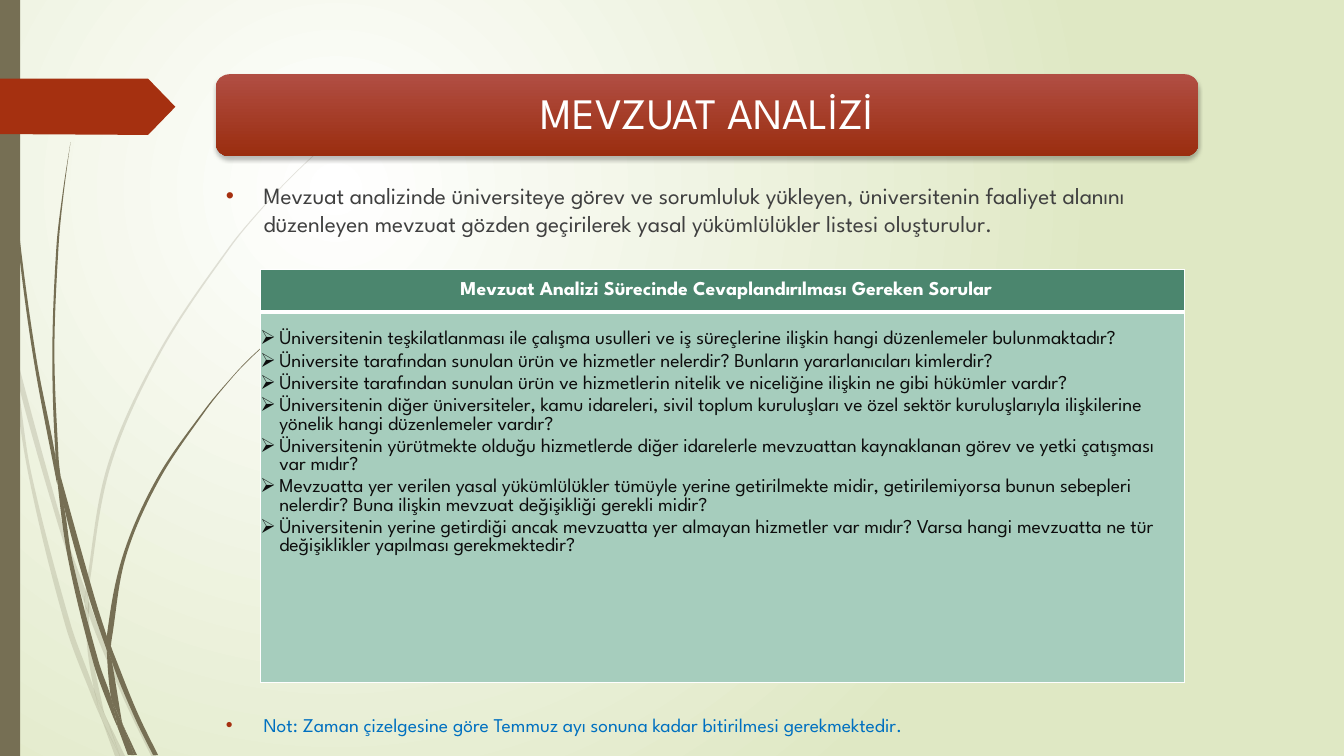
from typing import NamedTuple

from lxml.etree import SubElement
from pptx import Presentation
from pptx.dml.color import RGBColor
from pptx.enum.shapes import MSO_SHAPE as Preset
from pptx.enum.text import MSO_ANCHOR as Anchor, MSO_AUTO_SIZE as AutoSize, PP_ALIGN as Align
from pptx.oxml.ns import qn
from pptx.util import Pt

FONT = "League Spartan"
COLOURS = {"white": "FFFFFF", "mist": "DFE8C4", "olive": "766F54", "rust": "A53010", "black": "000000",
           "banner_top": "B14E43", "banner_bottom": "9A2D0F", "body": "404040", "note": "0070C0",
           "header": "4B866E", "cell": "A6CDBD", "question": "0D0D0D"}
INTRO = ("Mevzuat analizinde üniversiteye görev ve sorumluluk yükleyen, üniversitenin faaliyet alanını "
         "düzenleyen mevzuat gözden geçirilerek yasal yükümlülükler listesi oluşturulur.")
NOTE = "Not: Zaman çizelgesine göre Temmuz ayı sonuna kadar bitirilmesi gerekmektedir."
HEADING = "Mevzuat Analizi Sürecinde Cevaplandırılması Gereken Sorular"
QUESTIONS = [
    "Üniversitenin teşkilatlanması ile çalışma usulleri ve iş süreçlerine ilişkin hangi düzenlemeler bulunmaktadır?",
    "Üniversite tarafından sunulan ürün ve hizmetler nelerdir? Bunların yararlanıcıları kimlerdir?",
    "Üniversite tarafından sunulan ürün ve hizmetlerin nitelik ve niceliğine ilişkin ne gibi hükümler vardır?",
    "Üniversitenin diğer üniversiteler, kamu idareleri, sivil toplum kuruluşları ve özel sektör "
    "kuruluşlarıyla ilişkilerine yönelik hangi düzenlemeler vardır?",
    "Üniversitenin yürütmekte olduğu hizmetlerde diğer idarelerle mevzuattan kaynaklanan görev ve yetki "
    "çatışması var mıdır?",
    "Mevzuatta yer verilen yasal yükümlülükler tümüyle yerine getirilmekte midir, getirilemiyorsa bunun "
    "sebepleri nelerdir? Buna ilişkin mevzuat değişikliği gerekli midir?",
    "Üniversitenin yerine getirdiği ancak mevzuatta yer almayan hizmetler var mıdır? Varsa hangi "
    "mevzuatta ne tür değişiklikler yapılması gerekmektedir?",
]
Points = list[tuple[float, float]]


class Blade(NamedTuple):
    """One piece of grass: its two edges, each from top to bottom."""
    left: Points
    right: Points


PALE_GRASS = [
    Blade([(0, 215.3), (7.2, 247.7), (7.9, 252)], [(0, 203), (6.5, 231.8), (7.9, 252)]),
    Blade([(10.1, 248.4), (12.2, 270.7), (41.8, 375.8), (60.5, 431.3)],
          [(10.1, 248.4), (44.6, 374.4), (61.2, 421.9)]),
    Blade([(63.4, 429.1), (63.4, 439.2), (88.6, 499.7), (108, 540)],
          [(63.4, 429.1), (66.2, 437), (91.4, 498.2), (111.6, 540)]),
    Blade([(75.6, 511.9), (85.7, 540)], [(75.6, 511.9), (89.3, 540)]),
    Blade([(7.9, 252), (20.2, 338.4), (46.8, 447.1), (66.2, 499), (72.7, 514.1)],
          [(7.9, 252), (12.2, 270.7), (22.3, 337.7), (50.4, 445.7), (67, 491.8), (71.3, 509), (72.7, 514.1)]),
    Blade([(60.5, 431.3), (62.6, 465.1), (67, 491.8), (69.1, 498.2), (75.6, 511.9)],
          [(60.5, 431.3), (63.4, 437.8), (63.4, 439.2), (65.5, 465.1), (74.2, 508.3), (75.6, 511.9)]),
    Blade([(224.6, 110.2), (208.1, 126), (193, 141.8), (164.2, 175.7), (113.8, 250.6), (77, 331.9),
           (61.2, 420.5), (61.2, 421.9), (63.4, 429.1)],
          [(224.6, 110.9), (208.8, 126), (193, 142.6), (164.9, 176.4), (115.2, 251.3), (79.2, 332.6),
           (63.4, 420.5), (63.4, 429.1)]),
    Blade([(72.7, 514.1), (82.1, 540)], [(72.7, 514.1), (85.7, 540)]),
    Blade([(61.2, 421.9), (60.5, 431.3), (63.4, 437.8)], [(61.2, 421.9), (63.4, 429.1), (63.4, 439.2)]),
    Blade([(67, 491.8), (71.3, 509), (72.7, 514.1), (85.7, 540)],
          [(67, 491.8), (69.1, 498.2), (75.6, 511.9), (85.7, 540)]),
]
DARK_GRASS = [
    Blade([(2.2, 0), (2.9, 34.6), (5, 79.2), (12.2, 167.8), (23.8, 255.6), (40.3, 343.4), (41, 346.3)],
          [(2.9, 0), (3.6, 34.6), (5.8, 78.5), (13.7, 167), (25.9, 255.6), (39.6, 326.2), (41, 346.3)]),
    Blade([(43.2, 339.8), (46.1, 363.6), (63.4, 426.2), (76.3, 464.4)],
          [(43.2, 339.8), (67, 424.8), (76.3, 454.3)]),
    Blade([(79.2, 461.5), (79.9, 472.3), (95, 509.8), (109.4, 539.3)],
          [(79.2, 461.5), (81.4, 467.3), (97.9, 508.3), (113, 539.3)]),
    Blade([(41, 343.4), (49, 401), (67, 474.5), (79.9, 509.8), (84.2, 519.8)],
          [(41, 343.4), (46.1, 363.6), (51.8, 400.3), (70.6, 473), (79.2, 497.5), (83.5, 516.2), (84.2, 519.8)]),
    Blade([(50.4, 101.5), (44.6, 139), (40.3, 176.4), (37.4, 251.3), (39.6, 323.3), (43.2, 339.8)],
          [(50.4, 101.5), (45.4, 139), (41.8, 176.4), (38.9, 251.3), (41.8, 326.2), (43.2, 339.8)]),
    Blade([(87.8, 517.7), (95.8, 539.3)], [(87.8, 517.7), (97.9, 539.3)]),
    Blade([(39.6, 323.3), (39.6, 326.2), (41, 343.4), (46.1, 363.6)],
          [(39.6, 323.3), (43.2, 339.8), (46.1, 363.6)]),
    Blade([(187.2, 247.7), (176.4, 257.8), (166.3, 268.6), (146.9, 291.6), (112.3, 341.3), (87.8, 396.7),
           (76.3, 454.3), (79.2, 461.5)],
          [(187.9, 247.7), (176.4, 258.5), (166.3, 269.3), (147.6, 292.3), (113.8, 342.7), (90, 397.4),
           (79.9, 455.8), (79.2, 461.5)]),
    Blade([(84.2, 519.8), (91.4, 539.3)], [(84.2, 519.8), (94.3, 539.3)]),
    Blade([(76.3, 464.4), (79.2, 497.5), (83.5, 508.3), (87.8, 517.7)],
          [(76.3, 464.4), (78.5, 468.7), (79.9, 472.3), (87.1, 515.5), (87.8, 517.7)]),
    Blade([(76.3, 454.3), (76.3, 464.4), (78.5, 468.7), (79.9, 472.3)],
          [(76.3, 454.3), (79.2, 461.5), (79.9, 472.3)]),
    Blade([(79.2, 497.5), (83.5, 516.2), (84.2, 519.8), (93.6, 539.3)],
          [(79.2, 497.5), (83.5, 508.3), (87.8, 517.7), (95.8, 539.3)]),
]
RIBBON = [(0, 56.2), (105.8, 56.2), (125.3, 76.3), (105.8, 96.4), (0, 95.8)]


def rgb(name: str) -> RGBColor:
    return RGBColor.from_string(COLOURS[name])


def paint(shape, colour: str, opacity: int = 100) -> None:
    shape.shadow.inherit = False
    shape.fill.solid()
    shape.fill.fore_color.rgb = rgb(colour)
    shape.line.fill.background()
    if opacity < 100:
        SubElement(shape.fill._xPr.find(".//" + qn("a:srgbClr")), qn("a:alpha"), val=str(opacity * 1000))


def set_stops(fill, first: str, last: str) -> None:
    fill.gradient()
    for stop, colour, position in zip(fill.gradient_stops, (first, last), (0, 1)):
        stop.color.rgb, stop.position = rgb(colour), position


def add_outline(shapes, points: Points, colour: str, opacity: int = 100):
    start, *rest = [(Pt(x), Pt(y)) for x, y in points]
    builder = shapes.build_freeform(*start, scale=1.0)
    builder.add_line_segments(rest, close=True)
    outline = builder.convert_to_shape()
    paint(outline, colour, opacity)
    return outline


def edge_controls(edge: Points) -> list[Points]:
    """Return the two Bézier handles of each span, with x taken as a smooth function of y."""
    chords = [(b[0] - a[0]) / (b[1] - a[1]) for a, b in zip(edge, edge[1:])]
    inner = [(b[0] - a[0]) / (b[1] - a[1]) for a, b in zip(edge, edge[2:])] or chords
    slopes = [1.5 * chords[0] - inner[0] / 2, *inner, 1.5 * chords[-1] - inner[-1] / 2]
    if len(edge) == 2:
        slopes = chords * 2
    return [[(a[0] + s * (b[1] - a[1]) / 3, a[1] + (b[1] - a[1]) / 3),
             (b[0] - t * (b[1] - a[1]) / 3, b[1] - (b[1] - a[1]) / 3)]
            for a, b, s, t in zip(edge, edge[1:], slopes, slopes[1:])]


def add_blade(shapes, blade: Blade, opacity: int) -> None:
    outline = add_outline(shapes, blade.left + blade.right[::-1], "olive", opacity)
    rising = [handles[::-1] for handles in reversed(edge_controls(blade.right))]
    spans = [*edge_controls(blade.left), [], *rising]
    for line, handles in zip(list(outline._element.iter(qn("a:lnTo"))), spans):
        if handles:
            line.tag = qn("a:cubicBezTo")
            for i, (x, y) in enumerate(handles):
                handle = SubElement(line, qn("a:pt"), x=str(Pt(x) - outline.left), y=str(Pt(y) - outline.top))
                line.insert(i, handle)


def write(paragraph, text: str, *, size: float, colour: str, bold: bool = False, align: Align = Align.LEFT,
          before: float = 0, spacing: float = 1.0, bullet: str = "", bullet_colour: str = "",
          indent: float = 0, tracking: int = 0) -> None:
    run = paragraph.add_run()
    run.text = text
    run.font.name, run.font.size, run.font.bold = FONT, Pt(size), bold
    run.font.color.rgb = rgb(colour)
    if tracking:
        run._r.get_or_add_rPr().set("spc", str(tracking))
    paragraph.alignment, paragraph.space_before, paragraph.line_spacing = align, Pt(before), spacing
    props = paragraph._p.get_or_add_pPr()
    props.set("marL", str(Pt(indent)))
    props.set("indent", str(-Pt(indent) if bullet else 0))
    if bullet_colour:
        SubElement(SubElement(props, qn("a:buClr")), qn("a:srgbClr"), val=COLOURS[bullet_colour])
    SubElement(props, qn("a:buChar"), char=bullet) if bullet else SubElement(props, qn("a:buNone"))


def style_cell(cell, colour: str, top: float, bottom: float) -> None:
    for side, width in (("L", 1), ("R", 1), ("T", top), ("B", bottom)):
        border = SubElement(cell._tc.get_or_add_tcPr(), qn(f"a:ln{side}"), w=str(Pt(width)))
        SubElement(SubElement(border, qn("a:solidFill")), qn("a:srgbClr"), val=COLOURS["white"])
    cell.fill.solid()
    cell.fill.fore_color.rgb = rgb(colour)
    cell.margin_left = cell.margin_right = cell.margin_top = cell.margin_bottom = 0


def add_background(slide) -> None:
    set_stops(slide.background.fill, "white", "mist")
    gradient = slide._element.find(".//" + qn("a:gradFill"))
    gradient.remove(gradient.find(qn("a:lin")))
    circle = SubElement(gradient, qn("a:path"), path="circle")
    SubElement(circle, qn("a:fillToRect"), l="50000", t="50000", r="100000", b="100000")


def add_banner(slide) -> None:
    banner = slide.shapes.add_shape(Preset.ROUNDED_RECTANGLE, Pt(154.1), Pt(53), Pt(702), Pt(58.6))
    paint(banner, "rust")
    set_stops(banner.fill, "banner_top", "banner_bottom")
    banner.fill.gradient_angle = 270
    effects = banner._element.spPr.find(qn("a:effectLst"))
    shadow = SubElement(effects, qn("a:outerShdw"), blurRad=str(Pt(3)), dist=str(Pt(2)), dir="5400000")
    SubElement(SubElement(shadow, qn("a:srgbClr"), val=COLOURS["black"]), qn("a:alpha"), val="25000")


def fill_placeholders(slide) -> None:
    title, body = slide.shapes.title, slide.placeholders[1]
    for holder, anchor, box in ((title, Anchor.MIDDLE, (157, 56, 696.2, 52.6)),
                                (body, Anchor.TOP, (154.1, 126, 702, 414))):
        holder.left, holder.top, holder.width, holder.height = map(Pt, box)
        slide.shapes._spTree.append(holder._element)
        holder.text_frame.auto_size, holder.text_frame.vertical_anchor = AutoSize.NONE, anchor
    write(title.text_frame.paragraphs[0], "MEVZUAT ANALİZİ", size=31, colour="white", align=Align.CENTER, spacing=0.9)
    listing = dict(bullet="•", bullet_colour="rust", indent=27)
    write(body.text_frame.paragraphs[0], INTRO, size=16.6, colour="body", **listing)
    write(body.text_frame.add_paragraph(), NOTE, size=13.9, colour="note", before=340, **listing)


def add_questions(slide) -> None:
    table = slide.shapes.add_table(2, 1, Pt(186), Pt(192.4), Pt(660), Pt(295)).table
    table.first_row = table.horz_banding = False
    table.rows[0].height, table.rows[1].height = Pt(30.4), Pt(264.6)
    header, answers = table.cell(0, 0), table.cell(1, 0)
    style_cell(header, "header", 1, 3)
    style_cell(answers, "cell", 3, 1)
    header.vertical_anchor, answers.margin_top = Anchor.MIDDLE, Pt(13.8)
    write(header.text_frame.paragraphs[0], HEADING, size=14, colour="white", bold=True, align=Align.CENTER, indent=6)
    frame = answers.text_frame
    for i, question in enumerate(QUESTIONS):
        write(frame.add_paragraph() if i else frame.paragraphs[0], question, size=14, colour="question",
              before=3, bullet="➢", indent=13.5, tracking=-5)


def main() -> None:
    deck = Presentation()
    deck.slide_width, deck.slide_height = Pt(960), Pt(540)
    slide = deck.slides.add_slide(deck.slide_layouts[1])
    add_background(slide)
    for grass, opacity in ((PALE_GRASS, 20), (DARK_GRASS, 100)):
        for blade in grass:
            add_blade(slide.shapes, blade, opacity)
    paint(slide.shapes.add_shape(Preset.RECTANGLE, 0, 0, Pt(14.4), Pt(540)), "olive")
    add_outline(slide.shapes, RIBBON, "rust")
    add_banner(slide)
    fill_placeholders(slide)
    add_questions(slide)
    deck.save("out.pptx")


if __name__ == "__main__":
    main()
